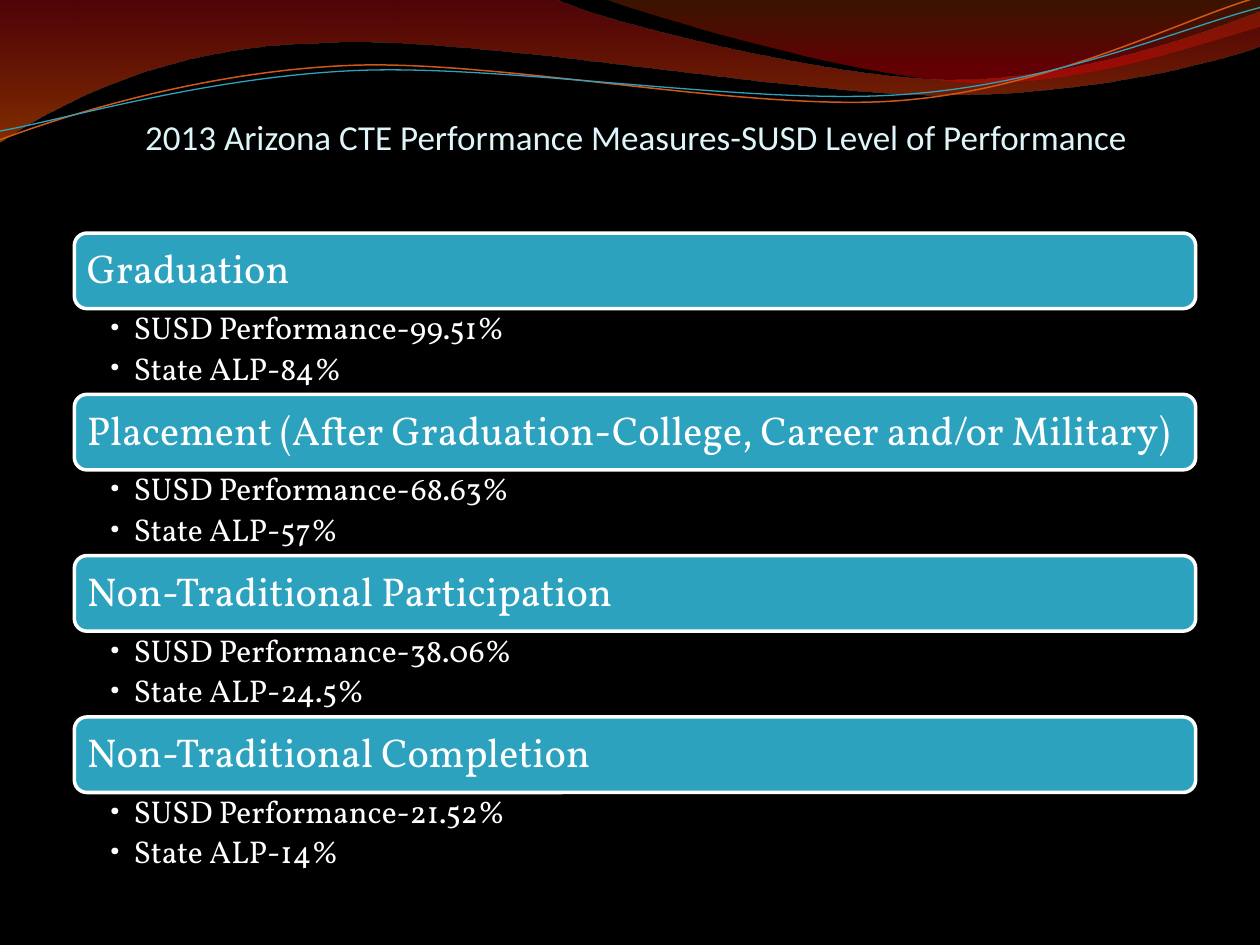
from typing import NamedTuple

from lxml.etree import SubElement
from pptx import Presentation
from pptx.dml.color import RGBColor
from pptx.enum.shapes import MSO_SHAPE as Shape
from pptx.enum.text import MSO_ANCHOR as Anchor, PP_ALIGN as Align
from pptx.oxml.ns import qn
from pptx.util import Inches, Pt

COLORS = {"background": "000000", "title": "DEF5FA", "text": "FFFFFF",
          "bar": "2DA2BF", "orange": "CF5818", "red": "AF0911",
          "flame": "EE5300", "rust": "C24400", "crimson": "DC000B"}
LEFT, TOP, WIDTH = 0.59, 1.85, 8.9
BAR_H, LIST_H = 0.6, 0.68


class Stop(NamedTuple):
    position: float
    color: str
    opacity: int


class Wave(NamedTuple):
    """Segments of two numbers are straight lines, of six are Bézier curves."""
    start: tuple
    segments: list
    stops: tuple = ()
    line: str = ""
    weight: float = 0


class Measure(NamedTuple):
    name: str
    performance: str
    state: str


WAVES = [
    Wave((0, 0), [(4.4, -0.01), (4.76, 0.17, 6.64, 0.63, 7.58, 0.63),
                  (8.53, 0.63, 9.58, 0.26, 10, 0.09), (10.01, 0.36),
                  (9.83, 0.44, 8.7, 0.76, 7.46, 0.75),
                  (6.22, 0.75, 3.82, 0.28, 2.57, 0.34),
                  (1.29, 0.36, 0.46, 0.83, -0.01, 1.13)],
         stops=(Stop(0, "red", 45), Stop(1, "flame", 55))),
    Wave((4.79, -0.01), [(5.09, 0.11, 6.82, 0.62, 7.69, 0.65),
                         (8.56, 0.69, 9.61, 0.32, 10, 0.21), (10, 0)],
         stops=(Stop(0, "rust", 30), Stop(0.8, "crimson", 45))),
    Wave((0, 1.11), [(0.48, 0.93, 1.58, 0.57, 2.77, 0.52),
                     (3.95, 0.47, 5.93, 0.89, 7.13, 0.8),
                     (8.33, 0.71, 9.38, 0.15, 9.98, -0.02)],
         line="orange", weight=0.85),
    Wave((0, 1.04), [(0.47, 0.96, 1.64, 0.61, 2.83, 0.56),
                     (4.03, 0.51, 5.97, 0.84, 7.17, 0.75),
                     (8.36, 0.67, 9.41, 0.21, 10, 0.06)],
         line="bar", weight=0.75),
]
MEASURES = [
    Measure("Graduation", "99.51%", "84%"),
    Measure("Placement (After Graduation-College, Career and/or Military)",
            "68.63%", "57%"),
    Measure("Non-Traditional Participation", "38.06%", "24.5%"),
    Measure("Non-Traditional Completion", "21.52%", "14%"),
]


def rgb(name: str) -> RGBColor:
    return RGBColor.from_string(COLORS[name])


def bend_segments(sp, segments: list) -> None:
    """Replace the straight segments that should be Bézier curves."""
    lines = list(sp._element.spPr.iter(qn("a:lnTo")))
    for line, segment in zip(lines, segments):
        if len(segment) == 2:
            continue
        line.tag = qn("a:cubicBezTo")
        line.clear()
        for x, y in zip(segment[::2], segment[1::2]):
            SubElement(line, qn("a:pt"), x=str(Inches(x) - sp.left),
                       y=str(Inches(y) - sp.top))


def draw_wave(s, wave: Wave) -> None:
    x, y = wave.start
    builder = s.shapes.build_freeform(Inches(x), Inches(y))
    ends = [(Inches(seg[-2]), Inches(seg[-1])) for seg in wave.segments]
    builder.add_line_segments(ends, close=bool(wave.stops))
    sp = builder.convert_to_shape()
    bend_segments(sp, wave.segments)
    sp.shadow.inherit = False
    if not wave.stops:
        sp.fill.background()
        sp.line.color.rgb = rgb(wave.line)
        sp.line.width = Pt(wave.weight)
        return
    sp.fill.gradient()
    sp.fill.gradient_angle = 270
    for target, stop in zip(sp.fill.gradient_stops, wave.stops):
        target.position = stop.position
        target.color.rgb = rgb(stop.color)
    for color, stop in zip(sp._element.spPr.iter(qn("a:srgbClr")), wave.stops):
        SubElement(color, qn("a:alpha"), val=str(stop.opacity * 1000))
    sp.line.fill.background()


def set_insets(tf, left: float, top: float, right: float, bottom: float) -> None:
    tf.margin_left, tf.margin_top = Inches(left), Inches(top)
    tf.margin_right, tf.margin_bottom = Inches(right), Inches(bottom)
    tf.word_wrap = True


def format_text(p, font: str, size: float, color: str) -> None:
    for r in p.runs:
        r.font.name, r.font.size = font, Pt(size)
        r.font.color.rgb = rgb(color)


def draw_bar(s, name: str, top: float) -> None:
    sp = s.shapes.add_shape(Shape.ROUNDED_RECTANGLE, Inches(LEFT), Inches(top),
                            Inches(WIDTH), Inches(BAR_H))
    sp.shadow.inherit = False
    sp.fill.solid()
    sp.fill.fore_color.rgb = rgb("bar")
    sp.line.color.rgb = rgb("text")
    sp.line.width = Pt(2)
    tf = sp.text_frame
    set_insets(tf, 0.07, 0.07, 0.07, 0.07)
    tf.vertical_anchor = Anchor.MIDDLE
    tf.text = name
    p = tf.paragraphs[0]
    p.alignment, p.line_spacing = Align.LEFT, 0.9
    format_text(p, "Vollkorn", 23, "text")


def draw_results(s, measure: Measure, top: float) -> None:
    tf = s.shapes.add_textbox(Inches(LEFT), Inches(top),
                              Inches(WIDTH), Inches(LIST_H)).text_frame
    set_insets(tf, 0.28, 0.03, 0.18, 0.03)
    tf.text = (f"SUSD Performance-{measure.performance}\n"
               f"State ALP-{measure.state}")
    for p in tf.paragraphs:
        p.level, p.line_spacing, p.space_after = 1, 0.9, Pt(3.6)
        props = p._p.get_or_add_pPr()
        props.set("marL", str(Inches(0.19)))
        props.set("indent", str(Inches(-0.19)))
        SubElement(props, qn("a:buFont"), typeface="Vollkorn")
        SubElement(props, qn("a:buChar"), char="•")
        format_text(p, "Vollkorn", 18, "text")


def format_title(s) -> None:
    title = s.shapes.title
    title.left, title.top = Inches(0.51), Inches(0)
    title.width, title.height = Inches(9.08), Inches(1.25)
    tf = title.text_frame
    tf.text = "2013 Arizona CTE Performance Measures-SUSD Level of Performance"
    set_insets(tf, 0, 0.05, 0, 0)
    tf.vertical_anchor = Anchor.BOTTOM
    tf.paragraphs[0].alignment = Align.CENTER
    format_text(tf.paragraphs[0], "Calibri", 20, "title")


def main() -> None:
    prs = Presentation()
    prs.slide_width, prs.slide_height = Inches(10), Inches(7.5)
    s = prs.slides.add_slide(prs.slide_layouts[5])
    s.background.fill.solid()
    s.background.fill.fore_color.rgb = rgb("background")
    for wave in WAVES:
        draw_wave(s, wave)
    format_title(s)
    for i, measure in enumerate(MEASURES):
        top = TOP + i * (BAR_H + LIST_H)
        draw_bar(s, measure.name, top)
        draw_results(s, measure, top + BAR_H)
    prs.save("out.pptx")


if __name__ == "__main__":
    main()
